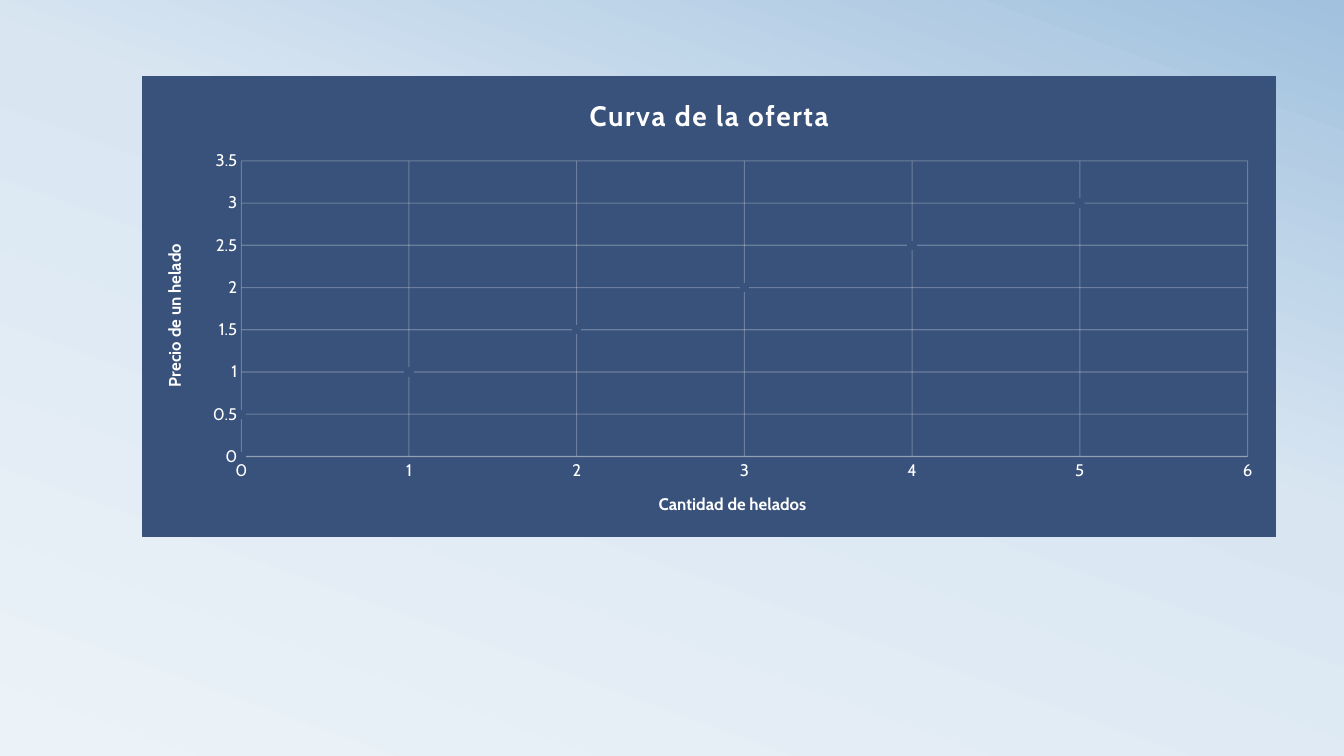
from copy import deepcopy
from dataclasses import dataclass

from lxml import etree
from pptx import Presentation
from pptx.chart.data import XyChartData
from pptx.dml.color import RGBColor
from pptx.enum.chart import XL_CHART_TYPE, XL_MARKER_STYLE, XL_TICK_MARK
from pptx.oxml import parse_xml
from pptx.oxml.ns import nsdecls, qn
from pptx.util import Inches, Pt


@dataclass(frozen=True)
class Theme:
    font: str = "Cabin"
    panel: str = "39527B"
    light: str = "FFFFFF"
    background: tuple = ((0, "ECF3F8"), (0.58, "D9E6F2"), (1, "A1C1DE"))
    background_angle: int = 70
    title_size: int = 20
    axis_size: int = 12
    grid_width: float = 0.75
    axis_width: float = 1
    line_opacity: int = 25


def apply(target, values):
    for name, value in values.items():
        setattr(target, name, value)


class SlideBuilder:
    def __init__(self, slide, theme):
        self.slide = slide
        self.theme = theme

    def text_format(self, size, bold=False):
        return {"name": self.theme.font, "size": Pt(size), "bold": bold}

    def background(self):
        fill = self.slide.background.fill
        fill.gradient()
        fill.gradient_angle = self.theme.background_angle
        first_stop = fill._fill._gradFill.find(qn("a:gsLst"))[0]
        first_stop.addnext(deepcopy(first_stop))
        for stop, (position, color) in zip(fill.gradient_stops, self.theme.background):
            stop.color.rgb = RGBColor.from_string(color)
            stop.position = position

    def label(self, text_frame, text, size, spacing=0):
        text_frame.text = text
        run = text_frame.paragraphs[0].runs[0]
        apply(run.font, self.text_format(size, bold=True))
        run.font.color.rgb = RGBColor.from_string(self.theme.light)
        run._r.get_or_add_rPr().set("spc", str(spacing * 100))

    def faint_line(self, line, width):
        line.width = Pt(width)
        line.color.rgb = RGBColor.from_string(self.theme.light)

    def axis(self, axis, title, maximum, step):
        theme = self.theme
        apply(axis, {
            "minimum_scale": 0, "maximum_scale": maximum, "major_unit": step,
            "has_major_gridlines": True, "has_minor_gridlines": False,
            "major_tick_mark": XL_TICK_MARK.NONE,
            "minor_tick_mark": XL_TICK_MARK.NONE,
        })
        apply(axis.tick_labels, {"number_format": "General",
                                 "number_format_is_linked": False})
        apply(axis.tick_labels.font, self.text_format(theme.axis_size))
        axis.tick_labels.font.color.rgb = RGBColor.from_string(theme.light)
        self.label(axis.axis_title.text_frame, title, theme.axis_size)
        self.faint_line(axis.major_gridlines.format.line, theme.grid_width)
        self.faint_line(axis.format.line, theme.axis_width)
        for color in axis._element.xpath(".//a:ln//a:srgbClr"):
            alpha = etree.SubElement(color, qn("a:alpha"))
            alpha.set("val", str(theme.line_opacity * 1000))

    def plot_layout(self, chart, **bounds):
        plot_area = chart._chartSpace.chart.plotArea
        for layout in plot_area.findall(qn("c:layout")):
            plot_area.remove(layout)
        sizes = "".join(f'<c:{name} val="{value}"/>' for name, value in bounds.items())
        plot_area.insert(0, parse_xml(
            f'<c:layout {nsdecls("c")}><c:manualLayout><c:layoutTarget val="inner"/>'
            f'<c:xMode val="edge"/><c:yMode val="edge"/>{sizes}'
            '</c:manualLayout></c:layout>'))

    def panel(self, chart):
        color = f'<a:solidFill><a:srgbClr val="{self.theme.panel}"/></a:solidFill>'
        chart._chartSpace.chart.addnext(parse_xml(
            f'<c:spPr {nsdecls("c", "a")}>{color}<a:ln w="9525">{color}</a:ln></c:spPr>'))

    def scatter(self, title, points, left, top, width, height):
        data = XyChartData()
        series = data.add_series("Series 1")
        for x, y in points:
            series.add_data_point(x, y)
        chart = self.slide.shapes.add_chart(
            XL_CHART_TYPE.XY_SCATTER, Inches(left), Inches(top),
            Inches(width), Inches(height), data).chart
        apply(chart, {"has_legend": False, "has_title": True})
        apply(chart.font, self.text_format(self.theme.axis_size))
        self.label(chart.chart_title.text_frame, title, self.theme.title_size, spacing=1)
        chart.chart_title.include_in_layout = False
        chart.plots[0].vary_by_categories = False
        self.panel(chart)

        # Markers only, in the panel colour
        plotted = chart.plots[0].series[0]
        plotted.format.line.fill.background()
        apply(plotted.marker, {"style": XL_MARKER_STYLE.CIRCLE, "size": 6})
        marker_format = plotted.marker.format
        for fill in (marker_format.fill, marker_format.line.fill):
            fill.solid()
            fill.fore_color.rgb = RGBColor.from_string(self.theme.panel)
        return chart


def main():
    presentation = Presentation()
    apply(presentation, {"slide_width": Inches(13.33), "slide_height": Inches(7.5)})
    slide = presentation.slides.add_slide(presentation.slide_layouts[6])
    builder = SlideBuilder(slide, Theme())
    builder.background()

    # Supply curve: the price rises by 0.5 with each ice cream
    supply = [(0, 0)] + [(count, 0.5 + count / 2) for count in range(6)]
    chart = builder.scatter("Curva de la oferta", supply, 1.41, 0.75, 11.25, 4.58)
    builder.plot_layout(chart, x=0.087, y=0.184, w=0.888, h=0.642)

    # Axes
    builder.axis(chart.category_axis, "Cantidad de helados", 6, 1)
    builder.axis(chart.value_axis, "Precio de un helado", 3.5, 0.5)
    chart.value_axis.format.line.fill.background()
    body = chart.value_axis.axis_title.text_frame._txBody.bodyPr
    for name, value in {"rot": "-5400000", "vert": "horz"}.items():
        body.set(name, value)

    presentation.save("out.pptx")


if __name__ == "__main__":
    main()
